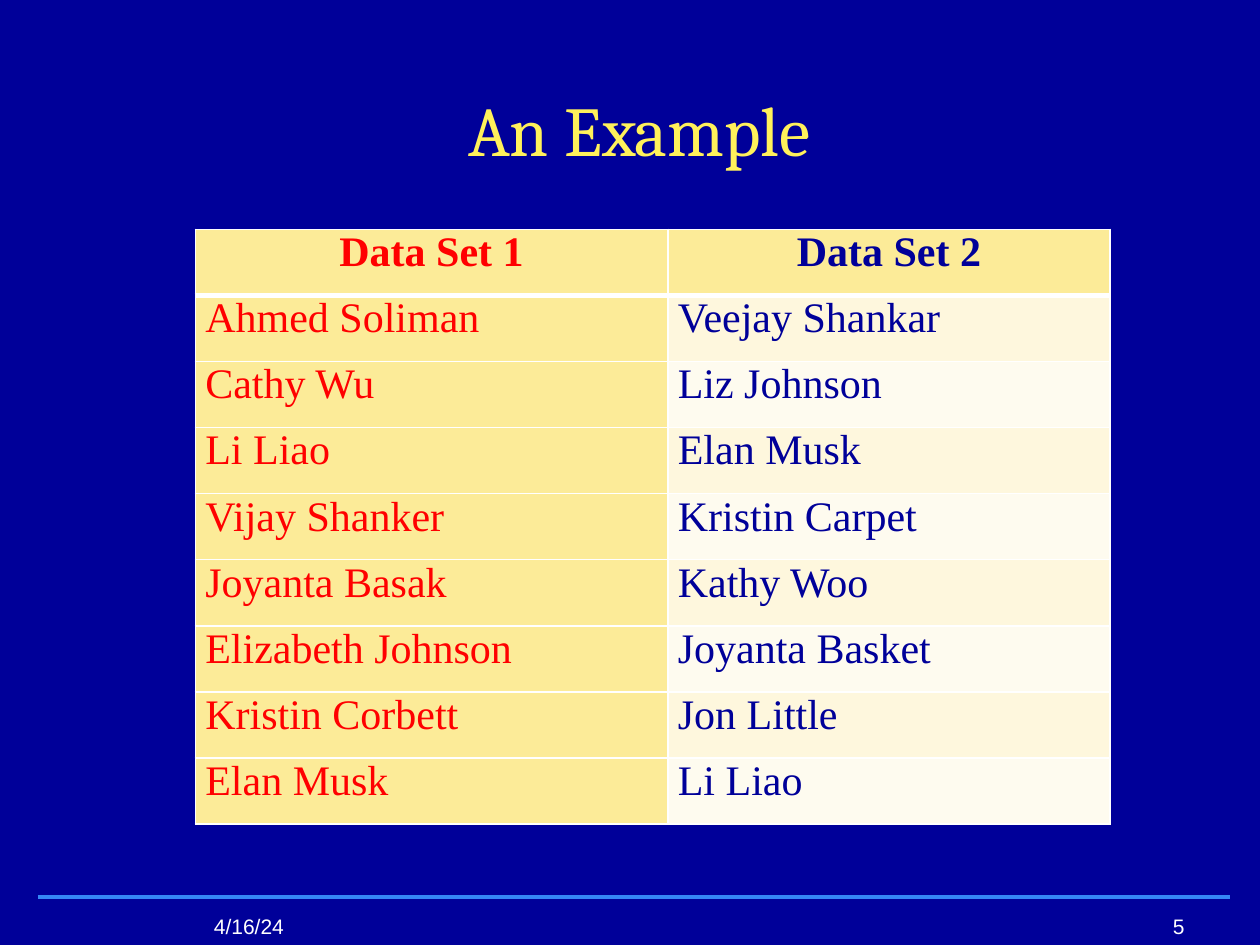
from lxml import etree
from pptx import Presentation
from pptx.dml.color import RGBColor
from pptx.enum.shapes import MSO_CONNECTOR
from pptx.enum.text import MSO_ANCHOR, PP_ALIGN
from pptx.oxml.ns import qn
from pptx.util import Inches, Pt

LEFT, CENTER = PP_ALIGN.LEFT, PP_ALIGN.CENTER
MIDDLE = MSO_ANCHOR.MIDDLE
STRAIGHT = MSO_CONNECTOR.STRAIGHT

NAVY = RGBColor(0x00, 0x00, 0x99)
WHITE = RGBColor(0xFF, 0xFF, 0xFF)
RED = RGBColor(0xFF, 0x00, 0x00)
BLUE = RGBColor(0x35, 0x87, 0xF5)
YELLOW = RGBColor(0xFF, 0xF1, 0x5B)
GOLD = RGBColor(0xFC, 0xEB, 0x98)
CREAM = RGBColor(0xFE, 0xF7, 0xDD)
IVORY = RGBColor(0xFE, 0xFB, 0xEF)

TITLE = "An Example"
ROWS = [
    ("Data Set 1", "Data Set 2"),
    ("Ahmed Soliman", "Veejay Shankar"),
    ("Cathy Wu", "Liz Johnson"),
    ("Li Liao", "Elan Musk"),
    ("Vijay Shanker", "Kristin Carpet"),
    ("Joyanta Basak", "Kathy Woo"),
    ("Elizabeth Johnson", "Joyanta Basket"),
    ("Kristin Corbett", "Jon Little"),
    ("Elan Musk", "Li Liao"),
]
WIDTHS = (3.75, 3.51)
INKS = (RED, NAVY)
HEIGHT = 4.72
FOOTER = [("4/16/24", 1.6, 0.94), ("5", 9.21, 0.4)]


def add_run(para, text, size, face, color, bold=False):
    run = para.add_run()
    run.text = text
    font = run.font
    font.size, font.name, font.bold = Pt(size), face, bold
    font.color.rgb = color


def add_text(slide, box, text, size, face, color, wrap=False):
    frame = slide.shapes.add_textbox(*map(Inches, box)).text_frame
    frame.word_wrap = wrap
    frame.vertical_anchor = MIDDLE
    para = frame.paragraphs[0]
    add_run(para, text, size, face, color)
    return para


def add_edge(cell, side, width):
    line = etree.SubElement(cell._tc.get_or_add_tcPr(), qn("a:ln" + side), w=str(Pt(width)))
    fill = etree.SubElement(line, qn("a:solidFill"))
    etree.SubElement(fill, qn("a:srgbClr"), val=str(WHITE))


def fill_cell(cell, row, col, text):
    cell.margin_left = cell.margin_right = Inches(0.08)
    cell.margin_top = cell.margin_bottom = 0
    thick = {(0, "B"), (1, "T")}
    for side in "LRTB":
        add_edge(cell, side, 3 if (row, side) in thick else 1)
    head = row == 0
    cell.fill.solid()
    band = CREAM if row % 2 else IVORY
    cell.fill.fore_color.rgb = GOLD if head or col == 0 else band
    para = cell.text_frame.paragraphs[0]
    para.alignment = CENTER if head else LEFT
    add_run(para, text, 24, "Times New Roman", INKS[col], head)


def add_names(slide):
    table = slide.shapes.add_table(
        len(ROWS), len(WIDTHS), Inches(1.55), Inches(1.82),
        Inches(sum(WIDTHS)), Inches(HEIGHT)).table
    for col, width in enumerate(WIDTHS):
        table.columns[col].width = Inches(width)
    for row, names in enumerate(ROWS):
        table.rows[row].height = Inches(HEIGHT / len(ROWS))
        for col, name in enumerate(names):
            fill_cell(table.cell(row, col), row, col, name)


def main():
    deck = Presentation()
    deck.slide_width, deck.slide_height = Inches(10), Inches(7.5)
    slide = deck.slides.add_slide(deck.slide_layouts[6])
    slide.background.fill.solid()
    slide.background.fill.fore_color.rgb = NAVY

    rule = slide.shapes.add_connector(
        STRAIGHT, Inches(0.3), Inches(7.12), Inches(9.76), Inches(7.12))
    rule.line.color.rgb = BLUE
    rule.line.width = Pt(2.25)
    etree.SubElement(rule._element.spPr, qn("a:effectLst"))

    for text, left, width in FOOTER:
        add_text(slide, (left, 7.2, width, 0.3), text, 12, "Arial", WHITE)

    title = add_text(slide, (0.39, 0.7, 9.37, 0.72), TITLE, 40, "Cambria", YELLOW, True)
    title.alignment = CENTER
    title.line_spacing = 0.9
    add_names(slide)
    deck.save("out.pptx")


if __name__ == "__main__":
    main()
